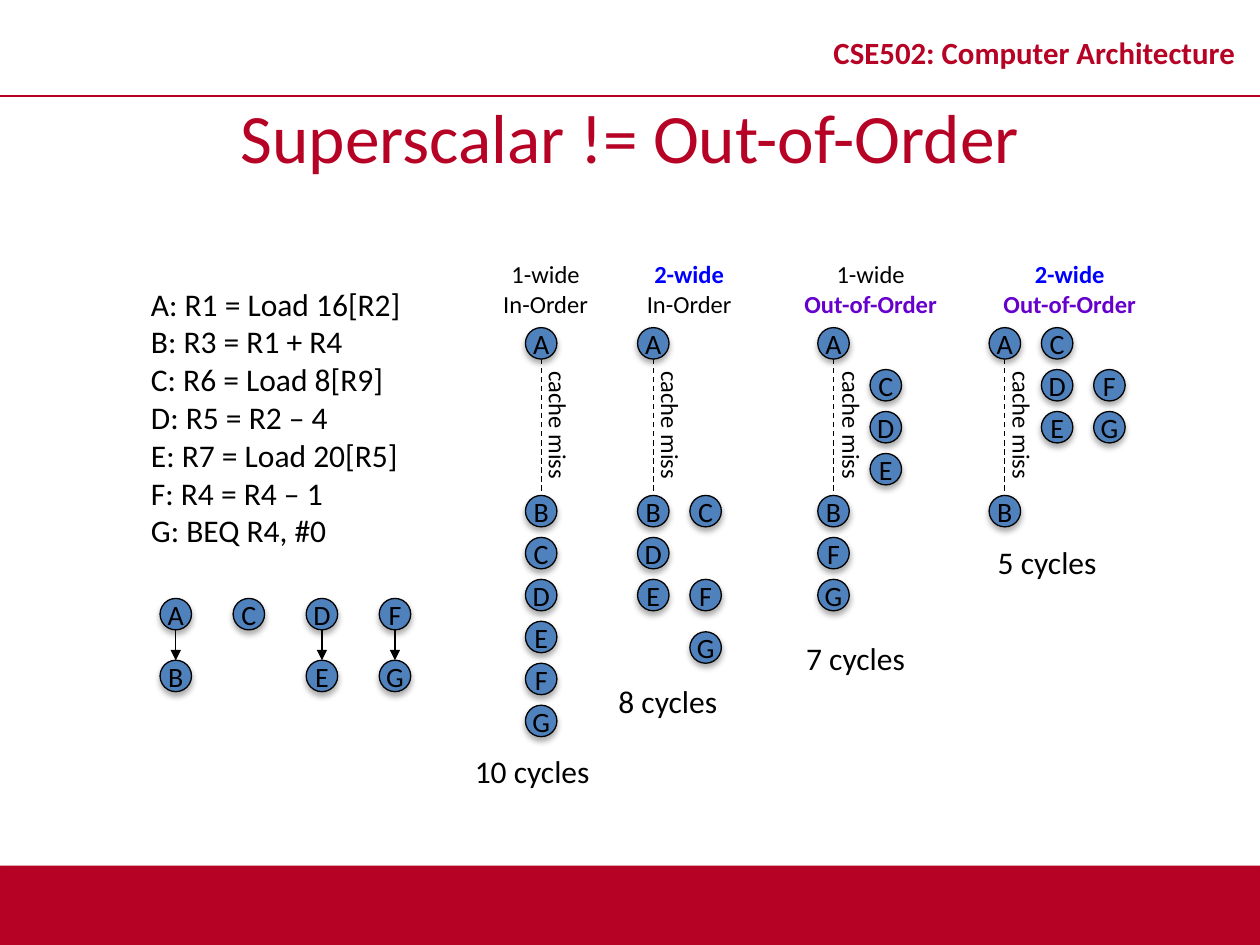
"""Build the slide comparing superscalar and out-of-order schedules."""
from lxml.etree import SubElement
from pptx import Presentation
from pptx.dml.color import RGBColor
from pptx.enum.dml import MSO_LINE
from pptx.enum.shapes import MSO_CONNECTOR, MSO_SHAPE
from pptx.enum.text import MSO_ANCHOR, MSO_AUTO_SIZE, PP_ALIGN
from pptx.oxml.ns import qn
from pptx.util import Inches, Pt

W, H = Inches(10), Inches(7.5)
RED = RGBColor(0xB6, 0x02, 0x25)
STEEL = RGBColor(0x4F, 0x81, 0xBD)
BLACK = RGBColor(0, 0, 0)
BLUE = RGBColor(0, 0, 0xFF)
PURPLE = RGBColor(0x66, 0, 0xCC)
EMPHASIS = {"2-wide": BLUE, "Out-of-Order": PURPLE}

DISC_W, DISC_H = 2.5, 3.33
TOP, ROW, LANE = 34.67, 4.44, 4.15
CHAIN_LEFT, CHAIN_STEP, CHAIN_TOP, CHAIN_BOTTOM = 12.7, 5.8, 63.33, 69.87

CODE = ["A: R1 = Load 16[R2]", "B: R3 = R1 + R4", "C: R6 = Load 8[R9]",
        "D: R5 = R2 – 4", "E: R7 = Load 20[R5]", "F: R4 = R4 – 1",
        "G: BEQ R4, #0"]
CHAINS = ["AB", "C", "DE", "FG"]
SCHEDULES = [
    (41.7, ["1-wide", "In-Order"], (38.7, 9.2), 41.6,
     [("A", 0, 0), ("B", 0, 4), ("C", 0, 5), ("D", 0, 6), ("E", 0, 7),
      ("F", 0, 8), ("G", 0, 9)],
     "10 cycles", (36.7, 78.93, 11.3)),
    (50.6, ["2-wide", "In-Order"], (50.1, 9.2), 50.5,
     [("A", 0, 0), ("B", 0, 4), ("C", 1, 4), ("D", 0, 5), ("E", 0, 6),
      ("F", 1, 6), ("G", 1, 7.25)],
     "8 cycles", (48.1, 71.47, 10.2)),
    (64.9, ["1-wide", "Out-of-Order"], (61.9, 14.4), 64.9,
     [("A", 0, 0), ("C", 1, 1), ("D", 1, 2), ("E", 1, 3), ("B", 0, 4),
      ("F", 0, 5), ("G", 0, 6)],
     "7 cycles", (63, 66.93, 10)),
    (78.5, ["2-wide", "Out-of-Order"], (77.7, 14.4), 78.4,
     [("A", 0, 0), ("C", 1, 0), ("D", 1, 1), ("F", 2, 1), ("E", 1, 2),
      ("G", 2, 2), ("B", 0, 4)],
     "5 cycles", (78.2, 56.8, 10.2)),
]


def box(x, y, w, h):
    """Turn percentages of the slide's size into lengths."""
    return [int(v * side / 100) for v, side in ((x, W), (y, H), (w, W), (h, H))]


def style(p, size, color=BLACK, bold=False, align=PP_ALIGN.CENTER):
    """Format every run of a paragraph."""
    p.alignment = align
    for r in p.runs:
        r.font.name, r.font.size, r.font.bold = "Calibri", Pt(size), bold
        r.font.color.rgb = color


def add_shadow(sp, blur, dist, alpha):
    """Give a shape a soft shadow straight below it."""
    sp.shadow.inherit = False
    effects = sp._element.spPr.find(qn("a:effectLst"))
    shadow = SubElement(effects, qn("a:outerShdw"), blurRad=str(Pt(blur)),
                        dist=str(Pt(dist)), dir="5400000", rotWithShape="0")
    color = SubElement(shadow, qn("a:srgbClr"), val=str(BLACK))
    SubElement(color, qn("a:alpha"), val=str(alpha * 1000))


def add_label(s, place, lines, size, align=PP_ALIGN.LEFT, vertical=False):
    """Add unwrapped text that sizes its box, emphasising key terms."""
    tf = s.shapes.add_textbox(*box(*place)).text_frame
    tf.word_wrap = False
    tf.auto_size = MSO_AUTO_SIZE.SHAPE_TO_FIT_TEXT
    if vertical:
        tf._txBody.bodyPr.set("vert", "eaVert")
    tf.text = "\n".join(lines)
    for p in tf.paragraphs:
        style(p, size, EMPHASIS.get(p.text, BLACK), p.text in EMPHASIS, align)


def add_heading(s, place, text, size, bold=False):
    """Add a red, centred heading and return its paragraph."""
    tf = s.shapes.add_textbox(*box(*place)).text_frame
    tf.word_wrap = True
    tf.vertical_anchor = MSO_ANCHOR.MIDDLE
    tf.text = text
    style(tf.paragraphs[0], size, RED, bold)
    return tf.paragraphs[0]


def add_disc(s, x, y, name):
    """Add one instruction as a lettered disc."""
    sp = s.shapes.add_shape(MSO_SHAPE.OVAL, *box(x, y, DISC_W, DISC_H))
    sp.fill.solid()
    sp.fill.fore_color.rgb = STEEL
    sp.line.color.rgb, sp.line.width = BLACK, Pt(0.75)
    add_shadow(sp, 3.5, 2.2, 32)
    tf = sp.text_frame
    tf.word_wrap = False
    tf.margin_left = tf.margin_right = 0
    tf.vertical_anchor = MSO_ANCHOR.MIDDLE
    tf.text = name
    style(tf.paragraphs[0], 16)


def add_line(s, start, end, color=BLACK, width=0.75, dash=None, arrow=False):
    """Add a straight line, dashed or with an arrowhead on request."""
    x1, y1, x2, y2 = box(*start, *end)
    line = s.shapes.add_connector(MSO_CONNECTOR.STRAIGHT, x1, y1, x2, y2)
    line.line.color.rgb, line.line.width = color, Pt(width)
    if dash:
        line.line.dash_style = dash
    spPr = line._element.spPr
    if arrow:
        SubElement(spPr.find(qn("a:ln")), qn("a:tailEnd"), type="triangle")
    SubElement(spPr, qn("a:effectLst"))


def add_frame(s):
    """Add the course header, its rule and the footer band."""
    band = s.shapes.add_shape(MSO_SHAPE.RECTANGLE, *box(0, 91.6, 100, 8.4))
    band.fill.solid()
    band.fill.fore_color.rgb = RED
    band.line.fill.background()
    add_shadow(band, 3.1, 1.8, 35)
    add_line(s, (0, 10.13), (100, 10.13), RED, 1)
    course = add_heading(s, (64.2, 1.73, 35.8, 8.4),
                         "CSE502: Computer Architecture", 17.6, True)
    course.line_spacing = 0.8


def add_chain(s, x, names):
    """Add a dependence chain of one or two instructions."""
    for name, y in zip(names, (CHAIN_TOP, CHAIN_BOTTOM)):
        add_disc(s, x, y, name)
    if len(names) > 1:
        mid = x + DISC_W / 2
        add_line(s, (mid, CHAIN_TOP + DISC_H), (mid, CHAIN_BOTTOM), arrow=True)


def add_schedule(s, x, title, title_span, miss_x, discs, cycles, cycles_at):
    """Add one machine's schedule on the grid of lanes and cycles."""
    left, width = title_span
    add_label(s, (left, 26.8, width, 7.6), title, 14, PP_ALIGN.CENTER)
    mid = x + DISC_W / 2
    add_line(s, (mid, TOP + DISC_H), (mid, TOP + 4 * ROW), dash=MSO_LINE.DASH)
    add_label(s, (miss_x, 38, 4.4, 12.67), ["cache miss"], 14, vertical=True)
    for name, lane, row in discs:
        add_disc(s, x + lane * LANE, TOP + row * ROW, name)
    add_label(s, (*cycles_at, 5.33), [cycles], 18)


def main():
    """Build and save the slide."""
    prs = Presentation()
    prs.slide_width, prs.slide_height = W, H
    s = prs.slides.add_slide(prs.slide_layouts[6])
    add_frame(s)
    add_heading(s, (0, 10.13, 100, 8.4), "Superscalar != Out-of-Order", 39.6)
    add_label(s, (11, 29.47, 23, 29.6), CODE, 18)
    for i, names in enumerate(CHAINS):
        add_chain(s, CHAIN_LEFT + i * CHAIN_STEP, names)
    for schedule in SCHEDULES:
        add_schedule(s, *schedule)
    prs.save("out.pptx")


if __name__ == "__main__":
    main()
